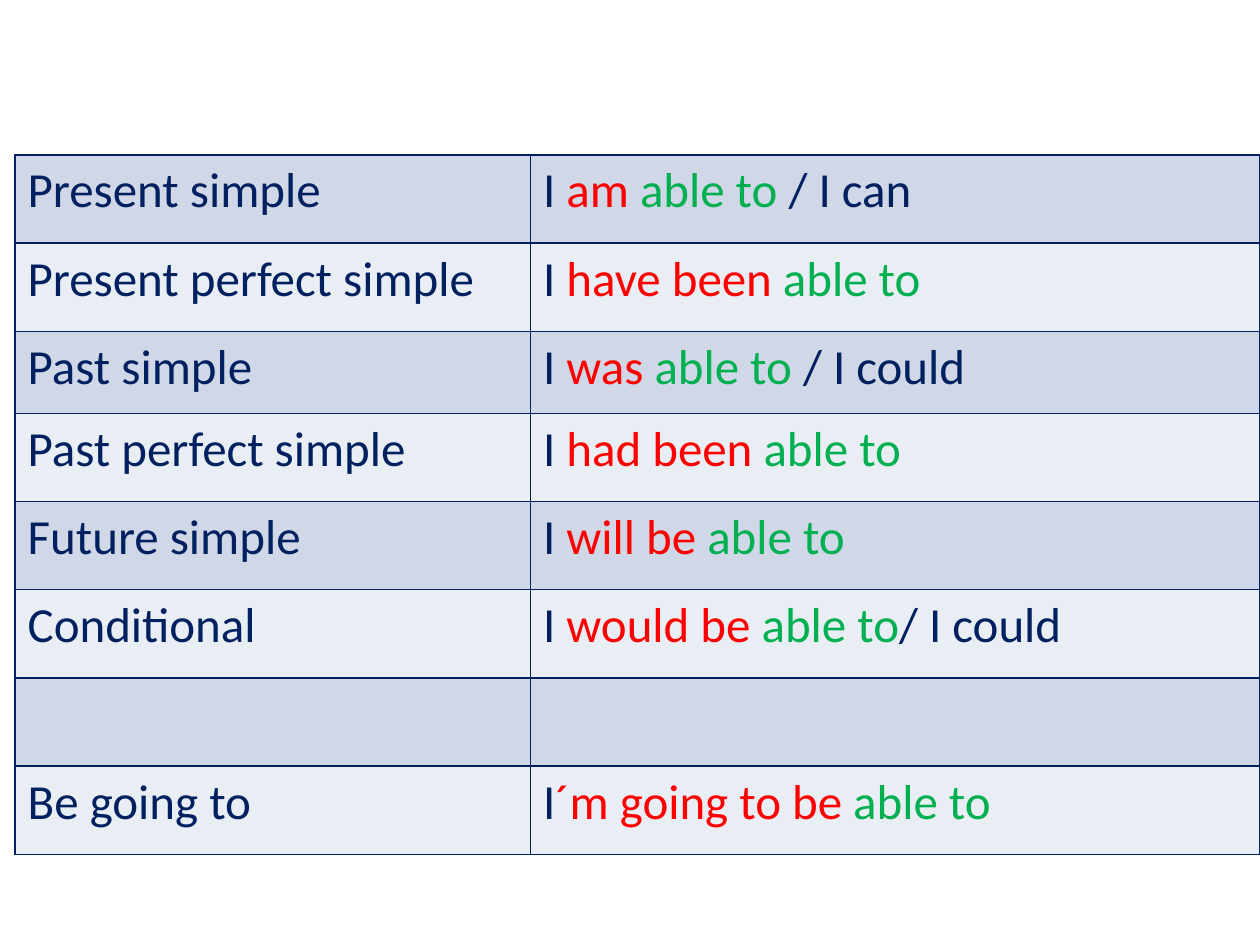
from dataclasses import dataclass

from lxml import etree
from pptx import Presentation
from pptx import util as u
from pptx.dml.color import RGBColor
from pptx.oxml import ns


@dataclass(frozen=True)
class Theme:
    font: str = "Calibri"
    size: int = 28
    line: int = 1
    navy: str = "002060"
    red: str = "FF0000"
    green: str = "00B050"
    bands: tuple = ("D0D8E8", "E9EDF4")


def write(para, text, font, size, color):
    """Add one formatted run to a paragraph."""
    run = para.add_run()
    run.text = text
    run.font.name = font
    run.font.size = u.Pt(size)
    run.font.color.rgb = RGBColor.from_string(color)


class Deck:
    def __init__(self, theme, width, height):
        self.theme = theme
        self.prs = Presentation()
        self.prs.slide_width = u.Inches(width)
        self.prs.slide_height = u.Inches(height)
        self.slide = self.prs.slides.add_slide(self.prs.slide_layouts[6])

    def edge(self, cell):
        """Draw a thin line on all four sides of a cell."""
        props = cell._tc.get_or_add_tcPr()
        for side in ("a:lnL", "a:lnR", "a:lnT", "a:lnB"):
            line = etree.SubElement(props, ns.qn(side), w=str(u.Pt(self.theme.line)))
            fill = etree.SubElement(line, ns.qn("a:solidFill"))
            etree.SubElement(fill, ns.qn("a:srgbClr"), val=self.theme.navy)

    def cell(self, cell, runs, band):
        self.edge(cell)
        cell.fill.solid()
        cell.fill.fore_color.rgb = RGBColor.from_string(band)
        para = cell.text_frame.paragraphs[0]
        for text, color in runs:
            write(para, text, font=self.theme.font, size=self.theme.size, color=color)

    def table(self, left, top, widths, heights, rows):
        frame = self.slide.shapes.add_table(
            len(heights), len(widths), u.Inches(left), u.Inches(top),
            u.Inches(sum(widths)), u.Inches(sum(heights)))
        grid = frame.table
        for col, width in zip(grid.columns, widths):
            col.width = u.Inches(width)
        for i, (row, height) in enumerate(zip(grid.rows, heights)):
            row.height = u.Inches(height)
            band = self.theme.bands[i % 2]
            for cell, runs in zip(row.cells, rows[i]):
                self.cell(cell, runs, band)


def main():
    theme = Theme()
    deck = Deck(theme, 10, 7.5)

    # Tense, subject, auxiliary, modal phrase, alternative
    tenses = [
        ("Present simple", "I ", "am ", "able to ", "/ I can"),
        ("Present perfect simple", "I ", "have been ", "able to", ""),
        ("Past simple", "I ", "was ", "able to ", "/ I could"),
        ("Past perfect simple", "I ", "had been ", "able to", ""),
        ("Future simple", "I ", "will be ", "able to", ""),
        ("Conditional", "I ", "would be ", "able to", "/ I could"),
        ("", "", "", "", ""),
        ("Be going to", "I", "´m going to be ", "able to", ""),
    ]

    # Colour each part by its role
    tints = (theme.navy, theme.red, theme.green, theme.navy)
    rows = []
    for name, *parts in tenses:
        form = [(part, tint) for part, tint in zip(parts, tints) if part]
        rows.append(([(name, theme.navy)] if name else [], form))

    # Table of tenses, with a slightly lower third row
    heights = [0.65 if name == "Past simple" else 0.7 for name, *_ in tenses]
    deck.table(0.12, 1.23, (4.09, 5.79), heights, rows)
    deck.prs.save("out.pptx")


if __name__ == "__main__":
    main()
